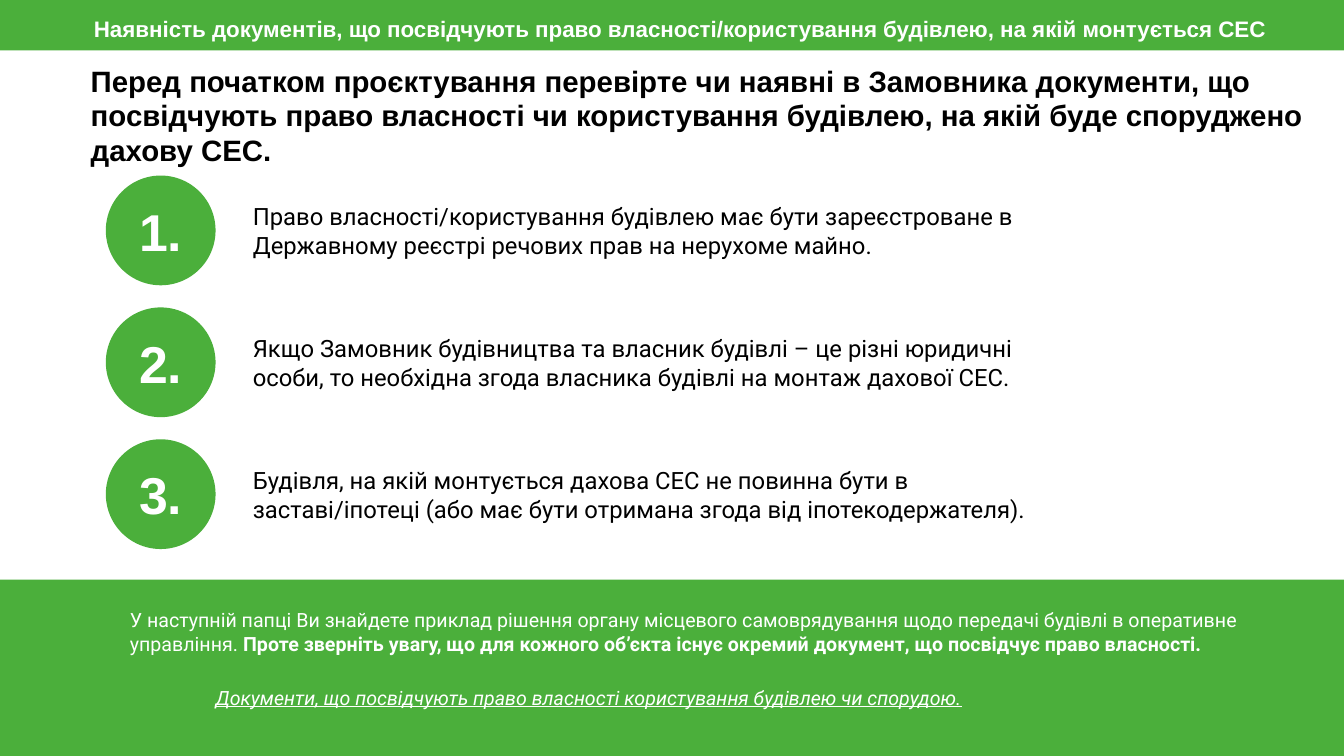
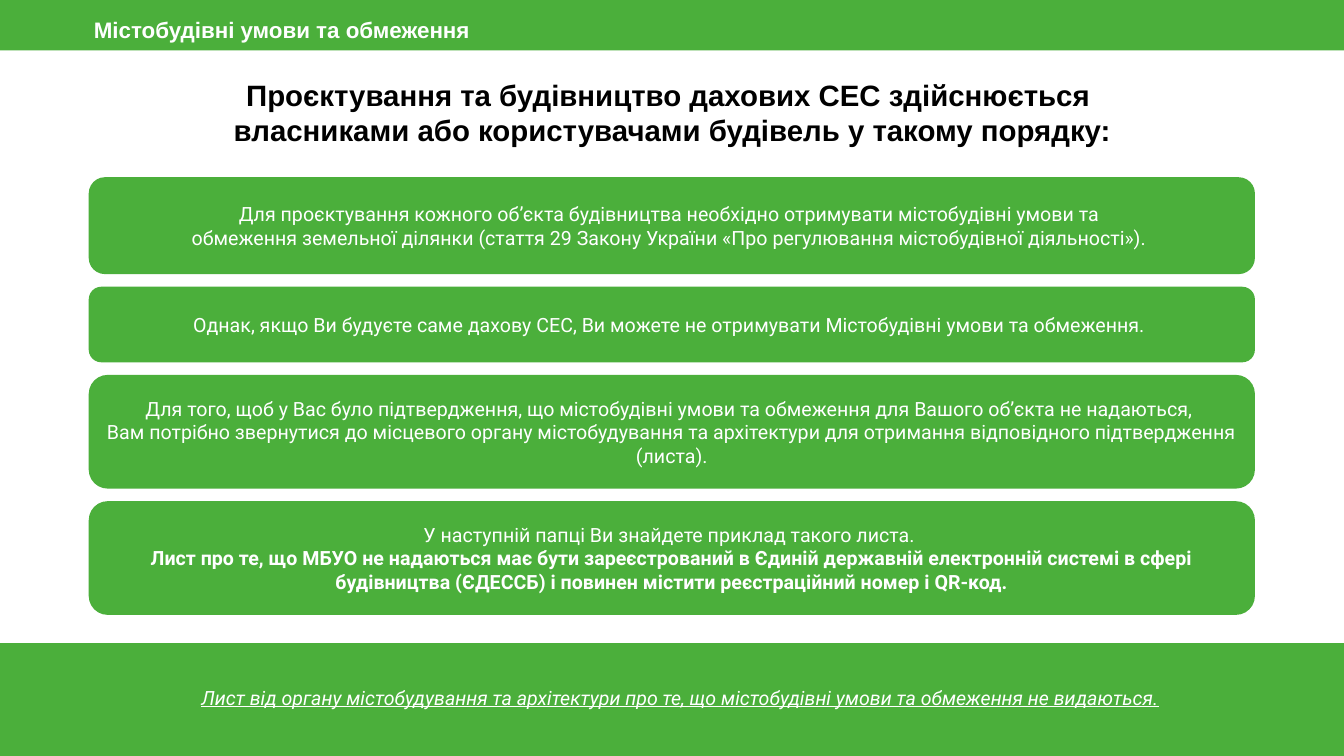
from pptx import Presentation
from pptx.dml.color import RGBColor
from pptx.enum.shapes import MSO_SHAPE as Preset
from pptx.enum.text import MSO_ANCHOR as Anchor, MSO_AUTO_SIZE as AutoSize, PP_ALIGN as Align
from pptx.util import Pt

GREEN = RGBColor(0x4B, 0xAF, 0x3B)
WHITE = RGBColor(0xFF, 0xFF, 0xFF)
BLACK = RGBColor(0x00, 0x00, 0x00)
WIDTH, HEIGHT = 960, 540
INSET = 7.2

TITLE = dict(name="Arial", size=Pt(21), bold=True)
HEADER = dict(name="Arial", size=Pt(16), bold=True)
NUMBER = dict(name="Arial", size=Pt(37), bold=True)
BODY = dict(name="Roboto", size=Pt(17))
NOTE = dict(name="Roboto", size=Pt(14))
STRONG = dict(NOTE, bold=True)
LINK = dict(NOTE, italic=True, underline=True)


class Builder:
    def __init__(self):
        self.deck = Presentation()
        self.deck.slide_width, self.deck.slide_height = Pt(WIDTH), Pt(HEIGHT)
        self.page = None

    def start(self):
        self.page = self.deck.slides.add_slide(self.deck.slide_layouts[5])

    def fill_text(self, box, spans, color, align=Align.LEFT, anchor=Anchor.TOP,
                  spacing=None, pad=INSET):
        frame = box.text_frame
        settings = dict(word_wrap=True, auto_size=AutoSize.NONE, vertical_anchor=anchor,
                        margin_left=Pt(INSET), margin_right=Pt(INSET),
                        margin_top=Pt(pad), margin_bottom=Pt(pad))
        for key, value in settings.items():
            setattr(frame, key, value)
        para = frame.paragraphs[0]
        para.alignment, para.line_spacing = align, spacing
        for text, style in spans:
            for index, line in enumerate(text.split("\n")):
                if index:
                    para.add_line_break()
                if line:
                    span = para.add_run()
                    span.text = line
                    span.font.color.rgb = color
                    for key, value in style.items():
                        setattr(span.font, key, value)

    def title(self, text, left, top, width, align=Align.LEFT):
        box = self.page.shapes.title
        frame = dict(left=left, top=top, width=width, height=46.8)
        for key, value in frame.items():
            setattr(box, key, Pt(value))
        self.fill_text(box, [(text, TITLE)], BLACK, align, Anchor.MIDDLE, 0.99, 3.6)

    def shape(self, preset, left, top, width, height):
        box = self.page.shapes.add_shape(preset, Pt(left), Pt(top), Pt(width), Pt(height))
        box.shadow.inherit = False
        box.fill.solid()
        box.fill.fore_color.rgb = GREEN
        box.line.fill.background()
        return box

    def text(self, spans, left, top, width, height, color=WHITE, **layout):
        box = self.page.shapes.add_textbox(Pt(left), Pt(top), Pt(width), Pt(height))
        self.fill_text(box, spans, color, **layout)

    def header(self, text, spacing=None):
        self.shape(Preset.RECTANGLE, 0, 0, WIDTH, 36)
        self.text([(text, HEADER)], 60, 4.3, 870, 36.7, spacing=spacing)

    def footer(self, top, link, left):
        self.shape(Preset.RECTANGLE, 0, top, WIDTH, HEIGHT - top)
        self.text([(link, LINK)], left, 482.4, 800, 54)

    def numbered(self, items, top=125.4, size=78.4, step=94.2, text_height=46.8):
        for index, item in enumerate(items):
            y = top + index * step
            circle = self.shape(Preset.OVAL, 75.6, y, size, size)
            self.fill_text(circle, [(f"{index + 1}.", NUMBER)], WHITE, Align.CENTER, Anchor.MIDDLE)
            self.text([(item, BODY)], 173.5, y + (size - text_height) / 2, 602, text_height,
                      BLACK, anchor=Anchor.MIDDLE)

    def cards(self, items, top=126.6, gap=9):
        for height, spans in items:
            card = self.shape(Preset.ROUNDED_RECTANGLE, 63.4, top, 833, height)
            self.fill_text(card, spans, WHITE, Align.CENTER, Anchor.MIDDLE)
            top += height + gap


def ownership(builder):
    builder.start()
    builder.title("Перед початком проєктування перевірте чи наявні в Замовника документи, що посвідчують "
                  "право власності чи користування будівлею, на якій буде споруджено дахову СЕС.",
                  57.6, 59.8, 881.3)
    builder.numbered([
        "Право власності/користування будівлею має бути зареєстроване в Державному реєстрі "
        "речових прав на нерухоме майно.",
        "Якщо Замовник будівництва та власник будівлі – це різні юридичні особи, то необхідна "
        "згода власника будівлі на монтаж дахової СЕС.",
        "Будівля, на якій монтується дахова СЕС не повинна бути в заставі/іпотеці (або має бути "
        "отримана згода від іпотекодержателя).",
    ])
    builder.footer(414, "Документи, що посвідчують право власності користування будівлею чи спорудою.", 146.9)
    builder.text([
        ("У наступній папці Ви знайдете приклад рішення органу місцевого самоврядування щодо "
         "передачі будівлі в оперативне управління. ", NOTE),
        ("Проте зверніть увагу, що для кожного об’єкта існує окремий документ, що посвідчує "
         "право власності.", STRONG),
    ], 85.7, 427, 823, 54)
    builder.header("Наявність документів, що посвідчують право власності/користування будівлею, "
                   "на якій монтується СЕС", 0.99)


def conditions(builder):
    builder.start()
    builder.title("Проєктування та будівництво дахових СЕС здійснюється \n"
                  "власниками або користувачами будівель у такому порядку:",
                  28.8, 57.6, 902.9, Align.CENTER)
    builder.cards([
        (69.2, [("Для проєктування кожного об’єкта будівництва необхідно отримувати містобудівні "
                 "умови та \nобмеження земельної ділянки (стаття 29 Закону України «Про регулювання "
                 "містобудівної діяльності»). ", NOTE)]),
        (54, [("Однак, якщо Ви будуєте саме дахову СЕС, Ви можете не отримувати Містобудівні "
               "умови та обмеження. ", NOTE)]),
        (81.2, [("Для того, щоб у Вас було підтвердження, що містобудівні умови та обмеження для "
                 "Вашого об’єкта не надаються, \nВам потрібно звернутися до місцевого органу "
                 "містобудування та архітектури для отримання відповідного підтвердження (листа).",
                 NOTE)]),
        (81.2, [("У наступній папці Ви знайдете приклад такого листа. \n", NOTE),
                ("Лист про те, що МБУО не надаються має бути зареєстрований в Єдиній державній "
                 "електронній системі в сфері будівництва (ЄДЕССБ) і повинен містити реєстраційний "
                 "номер і QR-код.", STRONG)]),
    ])
    builder.footer(459.4, "Лист від органу містобудування та архітектури про те, що містобудівні умови "
                   "та обмеження не видаються.", 136.8)
    builder.header("Містобудівні умови та обмеження")


def main():
    builder = Builder()
    ownership(builder)
    conditions(builder)
    builder.deck.save("out.pptx")


if __name__ == "__main__":
    main()
